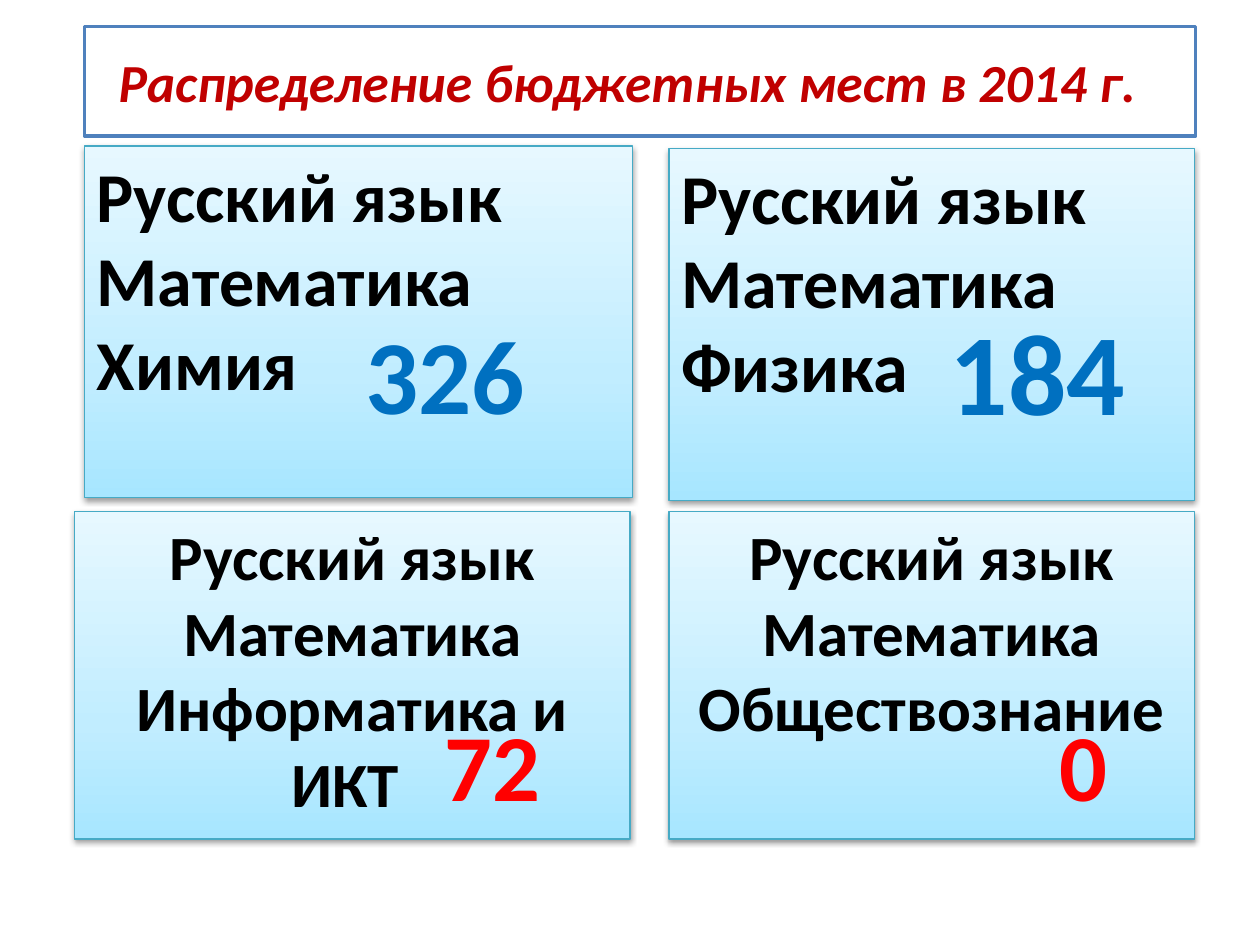
"""Build a slide on the distribution of state-funded places by exam set."""
from lxml import etree
from pptx import Presentation
from pptx.dml.color import RGBColor
from pptx.enum.shapes import MSO_SHAPE
from pptx.enum.text import MSO_ANCHOR, MSO_AUTO_SIZE, PP_ALIGN
from pptx.oxml import parse_xml
from pptx.oxml.ns import nsdecls, qn
from pptx.util import Inches, Pt

RECTANGLE = MSO_SHAPE.RECTANGLE
TOP, MIDDLE = MSO_ANCHOR.TOP, MSO_ANCHOR.MIDDLE
NO_AUTOFIT = MSO_AUTO_SIZE.NONE
LEFT, CENTER = PP_ALIGN.LEFT, PP_ALIGN.CENTER

BLACK = RGBColor(0x00, 0x00, 0x00)
WHITE = RGBColor(0xFF, 0xFF, 0xFF)
RED = RGBColor(0xFF, 0x00, 0x00)
DARK_RED = RGBColor(0xC0, 0x00, 0x00)
BLUE = RGBColor(0x00, 0x70, 0xC0)
BORDER_BLUE = RGBColor(0x4F, 0x81, 0xBD)
TEAL = RGBColor(0x46, 0xAA, 0xC5)
CARD_STOPS = (
    (0, RGBColor(0xA7, 0xE6, 0xFF)),
    (35, RGBColor(0xC1, 0xED, 0xFF)),
    (100, RGBColor(0xE7, 0xF8, 0xFF)),
)


class PlacesSlide:
    """Hold the slide and the style of its title, cards and counts."""

    font_name = "Calibri"

    def __init__(self, presentation):
        """Add a title-only slide."""
        self.slide = presentation.slides.add_slide(presentation.slide_layouts[5])

    def set_text(self, shape, lines, size, color, alignment=LEFT, italic=False):
        """Set one bold paragraph for each line."""
        frame = shape.text_frame
        frame.text = "\n".join(lines)
        frame.auto_size = NO_AUTOFIT
        for paragraph in frame.paragraphs:
            paragraph.alignment = alignment
            font = paragraph.font
            font.name, font.size, font.color.rgb = self.font_name, Pt(size), color
            font.bold, font.italic = True, italic
        return frame

    def title(self, text, *box):
        """Place the framed title."""
        shape = self.slide.shapes.title
        shape.left, shape.top, shape.width, shape.height = map(Inches, box)
        shape.fill.solid()
        shape.fill.fore_color.rgb = WHITE
        shape.line.color.rgb = BORDER_BLUE
        shape.line.width = Pt(2)
        frame = self.set_text(shape, [text], 30.6, DARK_RED, CENTER, italic=True)
        frame.vertical_anchor = MIDDLE
        frame.margin_right = Inches(0.3)

    def card(self, subjects, size, alignment, *box):
        """Add a shaded card that lists exam subjects."""
        shape = self.slide.shapes.add_shape(RECTANGLE, *map(Inches, box))
        self.shade(shape)
        shape.line.color.rgb = TEAL
        shape.line.width = Pt(0.75)
        self.drop_shadow(shape)
        frame = self.set_text(shape, subjects, size, BLACK, alignment)
        frame.vertical_anchor = TOP

    def shade(self, shape):
        """Fill a shape with the vertical card gradient."""
        shape.fill.gradient()
        shape.fill.gradient_angle = 90
        stops = shape.element.spPr.find(".//" + qn("a:gsLst"))
        for stop in list(stops):
            stops.remove(stop)
        for position, color in CARD_STOPS:
            stop = etree.SubElement(stops, qn("a:gs"), pos=str(position * 1000))
            etree.SubElement(stop, qn("a:srgbClr"), val=str(color))

    def drop_shadow(self, shape):
        """Give a shape a soft shadow below it."""
        shape.shadow.inherit = False
        shape.element.spPr.find(qn("a:effectLst")).append(parse_xml(
            f'<a:outerShdw {nsdecls("a")} blurRad="{Pt(3.1)}" dist="{Pt(1.6)}"'
            ' dir="5400000" rotWithShape="0"><a:srgbClr val="000000">'
            '<a:alpha val="38000"/></a:srgbClr></a:outerShdw>'))

    def count(self, text, size, color, *box):
        """Add a large number of places."""
        shape = self.slide.shapes.add_textbox(*map(Inches, box))
        self.set_text(shape, [text], size, color).word_wrap = True


def main():
    """Build and save the presentation."""
    presentation = Presentation()
    presentation.slide_width, presentation.slide_height = Inches(10), Inches(7.5)
    places = PlacesSlide(presentation)
    places.title("Распределение бюджетных мест в 2014 г.", 0.67, 0.21, 8.82, 0.87)

    common = ["Русский язык", "Математика"]
    for subject, size, alignment, box in (
        ("Химия", 40, LEFT, (0.67, 1.16, 4.35, 2.79)),
        ("Физика", 40, LEFT, (5.31, 1.18, 4.17, 2.79)),
        ("Информатика и ИКТ ", 36, CENTER, (0.59, 4.06, 4.41, 2.6)),
        ("Обществознание", 36, CENTER, (5.31, 4.06, 4.17, 2.6)),
    ):
        places.card(common + [subject], size, alignment, *box)

    for number, size, color, box in (
        ("72", 54, RED, (3.43, 5.56, 0.97, 1.01)),
        ("0", 54, RED, (8.31, 5.56, 1.28, 1.01)),
        ("326", 60, BLUE, (2.8, 2.41, 2.52, 1.11)),
        ("184", 66, BLUE, (7.44, 2.33, 1.61, 1.21)),
    ):
        places.count(number, size, color, *box)

    presentation.save("out.pptx")


if __name__ == "__main__":
    main()
